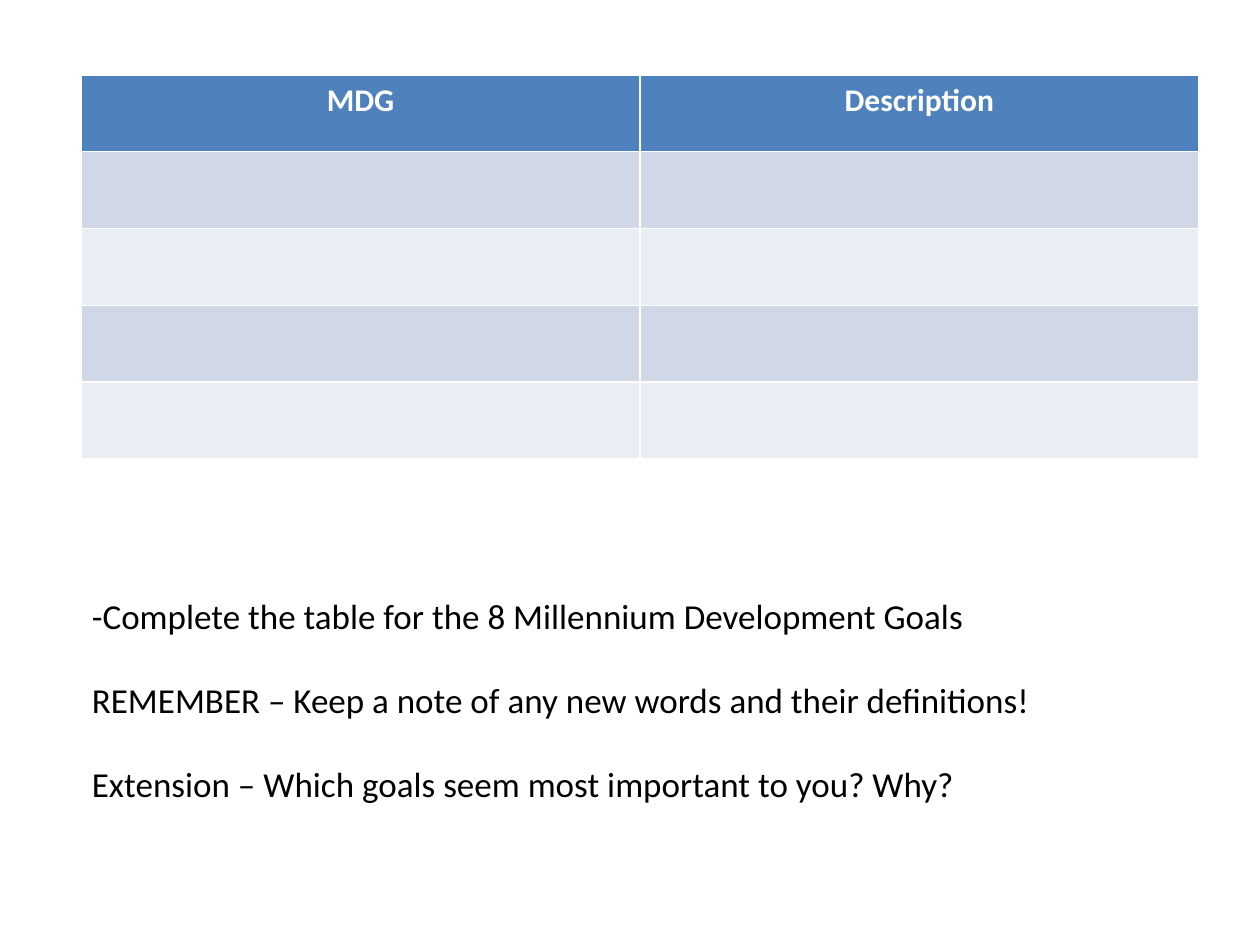
from pptx import Presentation
from pptx.dml.color import RGBColor
from pptx.enum.text import MSO_AUTO_SIZE, PP_ALIGN
from pptx.util import Pt


def style(p, size, color, bold=False):
    for r in p.runs:
        r.font.name = "Calibri"
        r.font.size = Pt(size)
        r.font.bold = bold
        r.font.color.rgb = RGBColor.from_string(color)


prs = Presentation()
prs.slide_width, prs.slide_height = Pt(720), Pt(540)
s = prs.slides.add_slide(prs.slide_layouts[6])

# Goals table: the default table style supplies the white borders
headers = ["MDG", "Description"]
row_fills = ["4F81BD", "D0D8E8", "E9EDF4", "D0D8E8", "E9EDF4"]
table = s.shapes.add_table(len(row_fills), len(headers),
                           Pt(46.4), Pt(42.8), Pt(638.6), Pt(219.5)).table
for row, color in zip(table.rows, row_fills):
    for cell in row.cells:
        cell.fill.solid()
        cell.fill.fore_color.rgb = RGBColor.from_string(color)

for cell, header in zip(table.rows[0].cells, headers):
    cell.text_frame.text = header
    p = cell.text_frame.paragraphs[0]
    p.alignment = PP_ALIGN.CENTER
    style(p, 18, "FFFFFF", bold=True)

# Instructions, one blank line's height apart
tasks = [
    "-Complete the table for the 8 Millennium Development Goals",
    "REMEMBER – Keep a note of any new words and their definitions!",
    "Extension – Which goals seem most important to you? Why?",
]
tf = s.shapes.add_textbox(Pt(45.4), Pt(336.2), Pt(605.5), Pt(128.2)).text_frame
tf.word_wrap = True
tf.auto_size = MSO_AUTO_SIZE.SHAPE_TO_FIT_TEXT
tf.text = "\n".join(tasks)
for i, p in enumerate(tf.paragraphs):
    p.space_before = Pt(24 if i else 0)
    style(p, 20, "000000")

prs.save("out.pptx")
